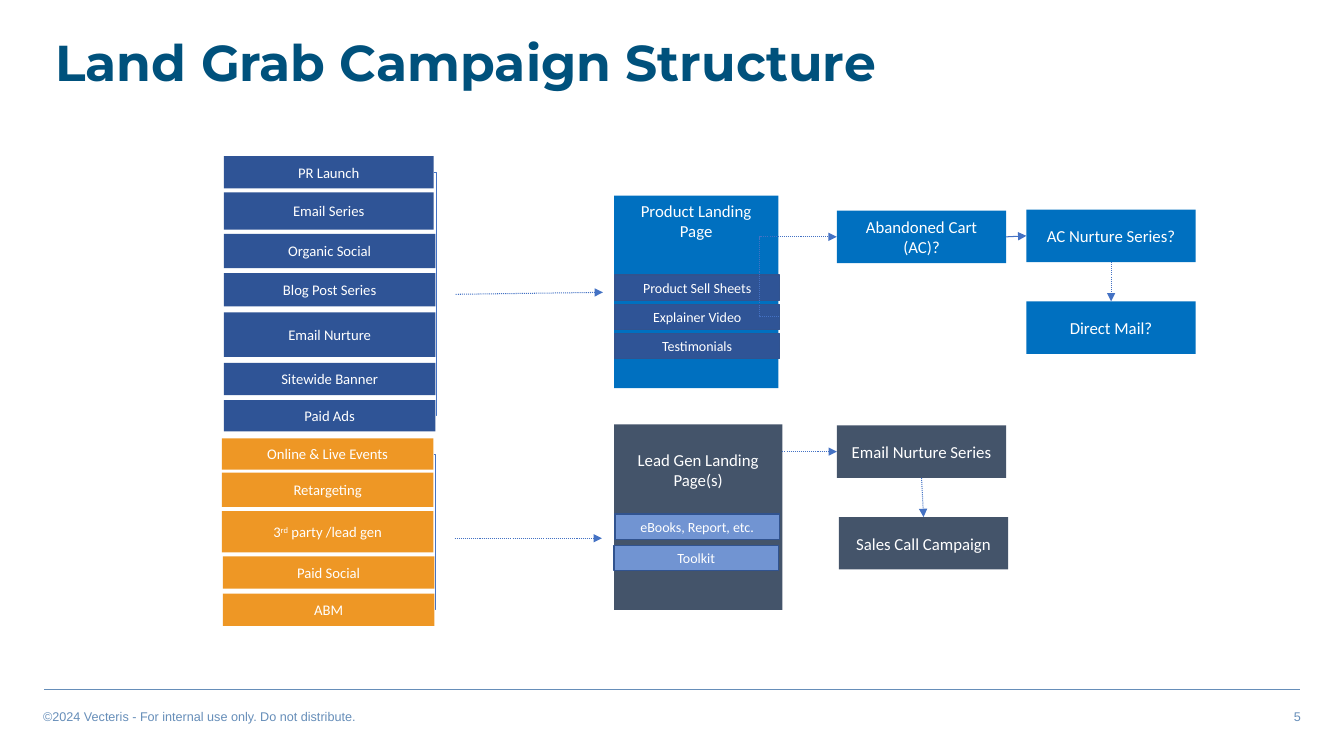
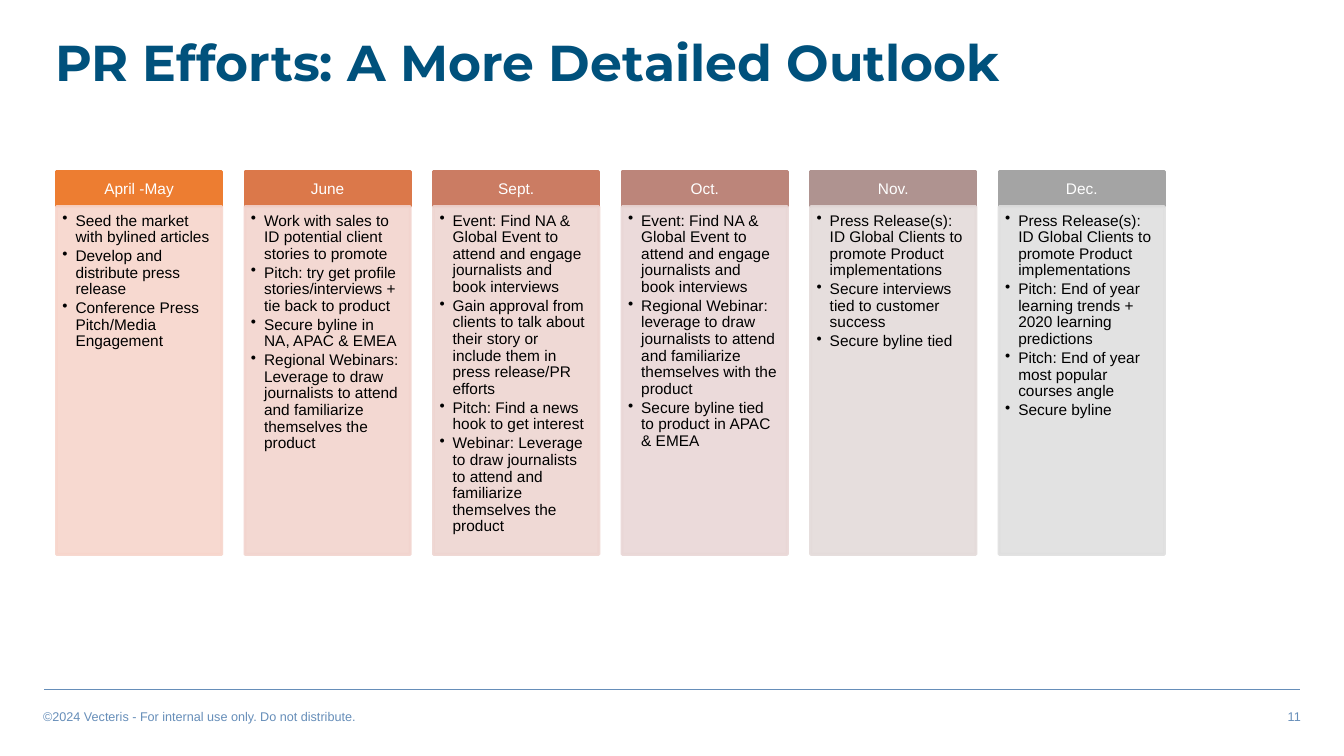
import lxml.etree
import pptx
import pptx.dml.color
import pptx.enum.dml
import pptx.enum.shapes
import pptx.enum.text
import pptx.oxml.ns
import pptx.util

Inches = pptx.util.Inches
Pt = pptx.util.Pt
rgb = pptx.dml.color.RGBColor.from_string
qn = pptx.oxml.ns.qn
ALIGN = pptx.enum.text.PP_ALIGN
ANCHOR = pptx.enum.text.MSO_ANCHOR
CONNECTOR = pptx.enum.shapes.MSO_CONNECTOR
TOP, LEFT, BOTTOM, RIGHT = range(4)

COLOURS = {
    "title": "00517C",
    "footer": "668EB9",
    "white": "FFFFFF",
    "black": "000000",
    "navy": "2F5496",
    "orange": "EE9725",
    "blue": "0070C0",
    "slate": "44546A",
    "periwinkle": "7194D2",
    "outline": "31538F",
    "arrow": "4472C4",
}


def add_box(page, place, paragraphs, size, font="Calibri", colour=COLOURS["white"], fill=None,
            line=None, line_width=1, align=ALIGN.CENTER, anchor=ANCHOR.MIDDLE,
            spacing=None, bold=False, bulleted=False):
    """Add a filled rectangle, or a text box without fill; ^ marks enclose superscript."""
    lengths = [Inches(length) for length in place]
    if fill:
        box = page.shapes.add_shape(pptx.enum.shapes.MSO_SHAPE.RECTANGLE, *lengths)
        box.shadow.inherit = False
        box.fill.solid()
        box.fill.fore_color.rgb = rgb(fill)
        if line:
            box.line.color.rgb = rgb(line)
            box.line.width = Pt(line_width)
        else:
            box.line.fill.background()
    else:
        box = page.shapes.add_textbox(*lengths)
    frame = box.text_frame
    frame.word_wrap = True
    frame.vertical_anchor = anchor
    for index, text in enumerate(paragraphs):
        para = frame.add_paragraph() if index else frame.paragraphs[0]
        para.alignment = align
        if spacing:
            para.line_spacing = spacing
        if bulleted:
            if index:
                para.space_before = Pt(1.6)
            properties = para._p.get_or_add_pPr()
            properties.set("marL", str(Inches(0.13)))
            properties.set("indent", str(-Inches(0.13)))
            lxml.etree.SubElement(properties, qn("a:buChar"), char="•")
        para.font.size = Pt(size)
        para.font.name = font
        para.font.bold = bold
        para.font.color.rgb = rgb(colour)
        for position, part in enumerate(text.split("^")):
            span = para.add_run()
            span.text = part
            if position % 2:
                span._r.get_or_add_rPr().set("baseline", "30000")
    return box


def add_line(page, start, end, colour=COLOURS["arrow"], width=0.75, dotted=False,
             arrow=False, bend=None):
    """Join two ends, each an (x, y) point in inches or a (shape, side) pair."""
    kind = CONNECTOR.STRAIGHT if bend is None else CONNECTOR.ELBOW
    connector = page.shapes.add_connector(kind, 0, 0, 0, 0)
    if isinstance(start[0], float):
        connector.begin_x, connector.begin_y = map(Inches, start)
    else:
        connector.begin_connect(*start)
    if isinstance(end[0], float):
        connector.end_x, connector.end_y = map(Inches, end)
    else:
        connector.end_connect(*end)
    connector.line.color.rgb = rgb(colour)
    connector.line.width = Pt(width)
    if dotted:
        connector.line.dash_style = pptx.enum.dml.MSO_LINE.ROUND_DOT
    properties = connector._element.spPr
    if arrow:
        lxml.etree.SubElement(properties.find(qn("a:ln")), qn("a:tailEnd"), type="triangle")
    if bend is not None:
        guides = properties.find(qn("a:prstGeom")).get_or_add_avLst()
        lxml.etree.SubElement(guides, qn("a:gd"), name="adj1", fmla=f"val {round(bend * 100000)}")
    lxml.etree.SubElement(properties, qn("a:effectLst"))


deck = pptx.Presentation()
deck.slide_width = Inches(13.33)
deck.slide_height = Inches(7.5)

# Title, rule and footer on every page
pages = []
for title, number in [("Land Grab Campaign Structure", "5"),
                      ("PR Efforts: A More Detailed Outlook", "11")]:
    page = deck.slides.add_slide(deck.slide_layouts[6])
    pages.append(page)
    add_line(page, (0.44, 6.84), (12.89, 6.84), COLOURS["footer"], 1)
    for left, text, align in [
        (0.33, "©2024 Vecteris - For internal use only. Do not distribute.", ALIGN.LEFT),
        (7.67, number, ALIGN.RIGHT),
    ]:
        add_box(page, (left, 6.98, 5.33, 0.25), [text], 9, "Arial", COLOURS["footer"],
                align=align, anchor=ANCHOR.TOP)
    add_box(page, (0.45, 0.33, 10.16, 0.76), [title], 36, "Montserrat", COLOURS["title"],
            align=ALIGN.LEFT, anchor=ANCHOR.TOP, spacing=0.9, bold=True)
campaign, outlook = pages

# Campaign: channels on the left
channels = {}
for label, left, top, width, height, fill in [
    ("PR Launch", 2.22, 1.55, 2.08, 0.32, "navy"),
    ("Email Series", 2.22, 1.91, 2.08, 0.37, "navy"),
    ("Organic Social", 2.22, 2.32, 2.1, 0.34, "navy"),
    ("Blog Post Series", 2.22, 2.71, 2.1, 0.33, "navy"),
    ("Email Nurture", 2.22, 3.1, 2.1, 0.44, "navy"),
    ("Sitewide Banner", 2.22, 3.6, 2.1, 0.32, "navy"),
    ("Paid Ads", 2.22, 3.97, 2.1, 0.31, "navy"),
    ("Online & Live Events", 2.2, 4.35, 2.1, 0.31, "orange"),
    ("Retargeting", 2.2, 4.69, 2.1, 0.34, "orange"),
    ("3^rd^ party /lead gen", 2.2, 5.07, 2.1, 0.41, "orange"),
    ("Paid Social", 2.21, 5.52, 2.1, 0.32, "orange"),
    ("ABM", 2.21, 5.89, 2.1, 0.32, "orange"),
]:
    channels[label] = add_box(campaign, (left, top, width, height), [label], 10.5,
                              fill=COLOURS[fill])

# Campaign: landing pages and their assets
add_box(campaign, (6.09, 1.94, 1.63, 1.91), ["Product Landing Page"], 12,
        fill=COLOURS["blue"], anchor=ANCHOR.TOP)
lead_page = add_box(campaign, (6.09, 4.21, 1.67, 1.84), ["Lead Gen Landing Page(s)"], 12,
                    fill=COLOURS["slate"], anchor=ANCHOR.TOP)
lead_page.text_frame.margin_top = Inches(0.25)

assets = {}
for label, left, top, fill in [
    ("Product Sell Sheets", 6.1, 2.73, "navy"),
    ("Explainer Video", 6.1, 3.02, "navy"),
    ("Testimonials", 6.1, 3.31, "navy"),
    ("eBooks, Report, etc.", 6.1, 5.1, "periwinkle"),
    ("Toolkit", 6.09, 5.41, "periwinkle"),
]:
    assets[label] = add_box(campaign, (left, top, 1.63, 0.25), [label], 10,
                            fill=COLOURS[fill], line=COLOURS["outline"])

# Campaign: follow-up steps on the right
steps = {}
for label, left, top, fill in [
    ("Abandoned Cart (AC)?", 8.3, 2.09, "blue"),
    ("AC Nurture Series?", 10.18, 2.08, "blue"),
    ("Direct Mail?", 10.18, 2.99, "blue"),
    ("Email Nurture Series", 8.3, 4.22, "slate"),
    ("Sales Call Campaign", 8.32, 5.13, "slate"),
]:
    steps[label] = add_box(campaign, (left, top, 1.68, 0.52), [label], 12, fill=COLOURS[fill])

# Campaign: brackets and arrows
for first, last, bend in [("PR Launch", "Paid Ads", 1.4),
                          ("Online & Live Events", "ABM", 2.42)]:
    add_line(campaign, (channels[first], RIGHT), (channels[last], RIGHT), bend=bend)

cart, nurture = steps["Abandoned Cart (AC)?"], steps["AC Nurture Series?"]
emails = steps["Email Nurture Series"]
add_line(campaign, (cart, RIGHT), (nurture, LEFT), arrow=True)
for start, end, bend in [
    ((4.52, 2.92), (5.98, 2.9), None),
    ((4.51, 5.34), (5.97, 5.34), None),
    ((assets["Explainer Video"], RIGHT), (cart, LEFT), -0.34),
    ((nurture, BOTTOM), (steps["Direct Mail?"], TOP), None),
    ((7.76, 4.48), (emails, LEFT), None),
    ((emails, BOTTOM), (steps["Sales Call Campaign"], TOP), None),
]:
    add_line(campaign, start, end, dotted=True, arrow=True, bend=bend)

# Outlook: one column per period
periods = [
    ("April -May", "ED7D31", "F7D5CB", [
        "Seed the market with bylined articles",
        "Develop and distribute press release",
        "Conference Press Pitch/Media Engagement",
    ]),
    ("June", "DB784A", "F2D4CE", [
        "Work with sales to ID potential client stories to promote",
        "Pitch: try get profile stories/interviews + tie back to product",
        "Secure byline in NA, APAC & EMEA",
        "Regional Webinars: Leverage to draw journalists to attend and familiarize "
        "themselves the product",
    ]),
    ("Sept.", "CB7C63", "EED5D1", [
        "Event: Find NA & Global Event to attend and engage journalists and book interviews",
        "Gain approval from clients to talk about their story or include them in "
        "press release/PR efforts",
        "Pitch: Find a news hook to get interest",
        "Webinar: Leverage to draw journalists to attend and familiarize themselves the product",
    ]),
    ("Oct.", "BC857A", "E9D7D6", [
        "Event: Find NA & Global Event to attend and engage journalists and book interviews",
        "Regional Webinar: leverage to draw journalists to attend and familiarize "
        "themselves with the product",
        "Secure byline tied to product in APAC & EMEA",
    ]),
    ("Nov.", "AF9390", "E4DBDA", [
        "Press Release(s): ID Global Clients to promote Product implementations",
        "Secure interviews tied to customer success",
        "Secure byline tied",
    ]),
    ("Dec.", "A4A4A4", "DFDFDF", [
        "Press Release(s): ID Global Clients to promote Product implementations",
        "Pitch: End of year learning trends + 2020 learning predictions",
        "Pitch: End of year most popular courses angle",
        "Secure byline",
    ]),
]
for column, (period, header_fill, body_fill, efforts) in enumerate(periods):
    left = 0.56 + 1.87 * column
    add_box(outlook, (left, 1.7, 1.64, 0.35), [period], 11, "Arial", fill=header_fill,
            line=header_fill, line_width=2, spacing=0.9)
    body = add_box(outlook, (left, 2.05, 1.64, 3.45), efforts, 11, "Arial", COLOURS["black"],
                   fill=body_fill, line=body_fill, line_width=2, align=ALIGN.LEFT,
                   anchor=ANCHOR.TOP, spacing=0.9, bulleted=True)
    body.text_frame.margin_left = body.text_frame.margin_top = Inches(0.06)
    body.text_frame.margin_right = Inches(0.09)
    for shade in body._element.spPr.findall(".//" + qn("a:srgbClr")):
        lxml.etree.SubElement(shade, qn("a:alpha"), val="90000")

deck.save("out.pptx")
